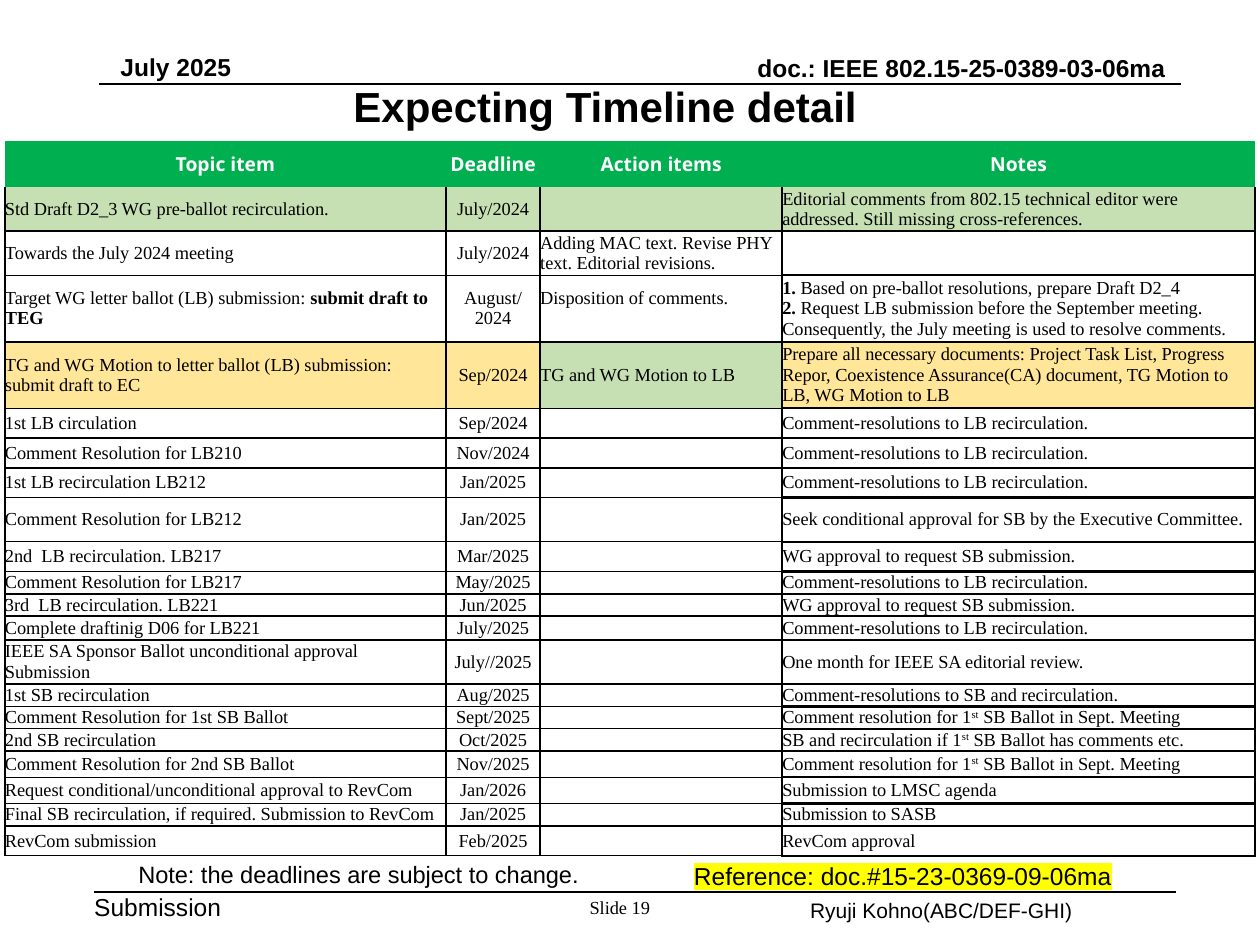
from dataclasses import dataclass

import pptx
import pptx.dml.color
import pptx.enum.shapes
import pptx.enum.text
import pptx.oxml
import pptx.oxml.ns
import pptx.util
from lxml import etree

Cm = pptx.util.Cm
Pt = pptx.util.Pt
Align = pptx.enum.text.PP_ALIGN
Anchor = pptx.enum.text.MSO_ANCHOR
qn = pptx.oxml.ns.qn


@dataclass(frozen=True)
class Theme:
    ink: str = "000000"
    paper: str = "FFFFFF"
    header: str = "00B050"
    done: str = "C6E0B4"
    motion: str = "FFE699"
    marker: str = "FFFF00"
    sans: str = "Arial"
    serif: str = "Times New Roman"
    header_font: str = "Noto Sans"
    title: float = 24
    running: float = 14
    note: float = 13.5
    author: float = 12
    header_size: float = 11
    body: float = 10.5
    thin: float = 1
    thick: float = 1.5


THEME = Theme()


@dataclass(frozen=True)
class Span:
    text: str
    bold: bool = False
    raised: bool = False
    marked: bool = False


@dataclass(frozen=True)
class Style:
    font: str = THEME.sans
    size: float = THEME.running
    bold: bool = False
    color: str = THEME.ink
    align: Align = Align.LEFT


@dataclass(frozen=True)
class Label:
    content: str | tuple[Span, ...]
    at: tuple[float, float, float, float]
    style: Style = Style()
    inset: tuple[float, float] = (0, 0)
    anchor: Anchor = Anchor.TOP
    wrap: bool = True


@dataclass(frozen=True)
class Row:
    height: float
    topic: str | tuple[Span, ...]
    deadline: str
    notes: str | tuple[Span, ...] = ""
    action: str = ""
    fill: str | None = None
    action_fill: str | None = None
    action_bottom: float = 0


PADDED = (0.25, 0.13)
LABELS = (
    Label("doc.: IEEE 802.15-25-0389-03-06ma", (12.5, 1.07, 11, 0.6),
          Style(bold=True, align=Align.RIGHT), anchor=Anchor.BOTTOM),
    Label("Submission", (1.9, 17.98, 2.95, 0.6)),
    Label("Ryuji Kohno(ABC/DEF-GHI)", (16.08, 17.96, 7.09, 0.76),
          Style(size=THEME.author), PADDED),
    Label("July 2025", (2.18, 1.3, 4.45, 0.6), Style(bold=True),
          (0.25, 0.25), Anchor.BOTTOM),
    Label("Note: the deadlines are subject to change.", (2.54, 17.2, 9.53, 0.84),
          Style(size=THEME.note), PADDED, wrap=False),
    Label((Span("Reference: doc.#15-23-0369-09-06ma", marked=True),),
          (13.74, 17.22, 11.43, 0.86), inset=PADDED),
    Label("Slide 19", (11.76, 18.06, 1.47, 0.76),
          Style(THEME.serif, THEME.body, align=Align.CENTER)),
)
TITLE = Label("Expecting Timeline detail", (6.83, 1.5, 10.74, 1.27),
              Style(size=THEME.title, bold=True, align=Align.CENTER), PADDED, wrap=False)

RESOLVE = "Comment-resolutions to LB recirculation."
APPROVAL = "WG approval to request SB submission."
FIRST = Span("st", raised=True)
SEPTEMBER = (Span("Comment resolution for 1"), FIRST, Span(" SB Ballot in Sept. Meeting"))

COLUMNS = {"Topic item": 8.89, "Deadline": 1.9, "Action items": 4.88, "Notes": 9.53}
HEADER_HEIGHT = 0.93
ROWS = (
    Row(0.89, "Std Draft D2_3 WG pre-ballot recirculation.", "July/2024",
        "Editorial comments from 802.15 technical editor were addressed. "
        "Still missing cross-references.", fill=THEME.done, action_fill=THEME.done),
    Row(0.89, "Towards the July 2024 meeting", "July/2024",
        action="Adding MAC text. Revise PHY text. Editorial revisions."),
    Row(1.34, (Span("Target WG letter ballot (LB) submission: "),
               Span("submit draft to TEG", bold=True)), "August/2024",
        (Span("1.", bold=True), Span(" Based on pre-ballot resolutions, prepare Draft D2_4"),
         Span("\n"), Span("2.", bold=True),
         Span(" Request LB submission before the September meeting. "
              "Consequently, the July meeting is used to resolve comments.")),
        "Disposition of comments.", action_bottom=0.42),
    Row(1.34, "TG and WG Motion to letter ballot (LB) submission: submit draft to EC", "Sep/2024",
        "Prepare all necessary documents: Project Task List, Progress Repor, "
        "Coexistence Assurance(CA) document, TG Motion to LB, WG Motion to LB",
        "TG and WG Motion to LB", THEME.motion, THEME.done),
    Row(0.6, "1st LB circulation", "Sep/2024", RESOLVE),
    Row(0.6, "Comment Resolution for LB210", "Nov/2024", RESOLVE),
    Row(0.6, "1st LB recirculation LB212", "Jan/2025", RESOLVE),
    Row(0.89, "Comment Resolution for LB212", "Jan/2025",
        "Seek conditional approval for SB by the Executive Committee."),
    Row(0.6, "2nd  LB recirculation. LB217", "Mar/2025", APPROVAL),
    Row(0.45, "Comment Resolution for LB217", "May/2025", RESOLVE),
    Row(0.45, "3rd  LB recirculation. LB221", "Jun/2025", APPROVAL),
    Row(0.48, "Complete draftinig D06 for LB221", "July/2025", RESOLVE),
    Row(0.89, "IEEE SA Sponsor Ballot unconditional approval Submission", "July//2025",
        "One month for IEEE SA editorial review."),
    Row(0.45, "1st SB recirculation", "Aug/2025", "Comment-resolutions to SB and recirculation."),
    Row(0.45, "Comment Resolution for 1st SB Ballot", "Sept/2025", SEPTEMBER),
    Row(0.45, "2nd SB recirculation", "Oct/2025",
        (Span("SB and recirculation if 1"), FIRST, Span(" SB Ballot has comments etc."))),
    Row(0.53, "Comment Resolution for 2nd SB Ballot", "Nov/2025", SEPTEMBER),
    Row(0.53, "Request conditional/unconditional approval to RevCom", "Jan/2026",
        "Submission to LMSC agenda"),
    Row(0.45, "Final SB recirculation, if required. Submission to RevCom", "Jan/2025",
        "Submission to SASB"),
    Row(0.6, "RevCom submission", "Feb/2025", "RevCom approval"),
)


def rgb(value: str) -> pptx.dml.color.RGBColor:
    return pptx.dml.color.RGBColor.from_string(value)


def add_color(parent: etree._Element, tag: str, value: str) -> None:
    holder = etree.SubElement(parent, qn(tag))
    etree.SubElement(holder, qn("a:srgbClr"), val=value)


def write(frame, content: str | tuple[Span, ...], style: Style) -> None:
    para = frame.paragraphs[0]
    para.alignment = style.align
    para.font.name, para.font.size = style.font, Pt(style.size)
    para.font.bold = style.bold
    para.font.color.rgb = rgb(style.color)
    if not content:
        etree.SubElement(para._p, qn("a:endParaRPr"), sz=str(int(style.size * 100)))
        return
    for span in (Span(content),) if isinstance(content, str) else content:
        if span.text == "\n":
            para.add_line_break()
            continue
        run = para.add_run()
        run.text = span.text
        if span.bold:
            run.font.bold = True
        if span.raised:
            run._r.get_or_add_rPr().set("baseline", "30000")
        if span.marked:
            add_color(run._r.get_or_add_rPr(), "a:highlight", THEME.marker)


def fill_label(box, label: Label) -> None:
    box.left, box.top, box.width, box.height = map(Cm, label.at)
    frame = box.text_frame
    frame.auto_size = pptx.enum.text.MSO_AUTO_SIZE.NONE
    frame.word_wrap = label.wrap
    frame.vertical_anchor = label.anchor
    frame.margin_left = frame.margin_right = Cm(label.inset[0])
    frame.margin_top = frame.margin_bottom = Cm(label.inset[1])
    write(frame, label.content, label.style)


def add_rule(page, left: float, right: float, top: float) -> None:
    rule = page.shapes.add_connector(
        pptx.enum.shapes.MSO_CONNECTOR.STRAIGHT, Cm(left), Cm(top), Cm(right), Cm(top))
    rule.line.color.rgb = rgb(THEME.ink)
    rule.line.width = Pt(THEME.thin)
    etree.SubElement(rule._element.spPr, qn("a:effectLst"))


def fill_cell(cell, content: str | tuple[Span, ...], style: Style, fill: str | None,
              borders: dict[str, float], bottom: float = 0) -> None:
    cell.margin_left = cell.margin_right = cell.margin_top = 0
    cell.margin_bottom = Cm(bottom)
    cell.vertical_anchor = Anchor.MIDDLE
    write(cell.text_frame, content, style)
    properties = cell._tc.get_or_add_tcPr()
    for side, width in borders.items():
        edge = etree.SubElement(properties, qn(f"a:ln{side}"), w=str(Pt(width)))
        add_color(edge, "a:solidFill", THEME.ink)
    if fill:
        cell.fill.solid()
        cell.fill.fore_color.rgb = rgb(fill)
    else:
        cell.fill.background()


def add_timeline(page) -> None:
    heights = (HEADER_HEIGHT, *(row.height for row in ROWS))
    table = page.shapes.add_table(len(heights), len(COLUMNS), Cm(0.1), Cm(2.84),
                                  Cm(sum(COLUMNS.values())), Cm(sum(heights))).table
    table.first_row = table.horz_banding = False
    table._tbl.tblPr.find(qn("a:tableStyleId")).text = "{2D5ABB26-0587-4C30-8999-92F81FD0307C}"
    for line, height in zip(table.rows, heights):
        line.height = Cm(height)
    heading = Style(THEME.header_font, THEME.header_size, True, THEME.paper, Align.CENTER)
    for index, (name, width) in enumerate(COLUMNS.items()):
        table.columns[index].width = Cm(width)
        fill_cell(table.cell(0, index), name, heading, THEME.header, {})
    left = Style(THEME.serif, THEME.body)
    center = Style(THEME.serif, THEME.body, align=Align.CENTER)
    for number, row in enumerate(ROWS, 1):
        for index, content in enumerate((row.topic, row.deadline, row.action, row.notes)):
            level = THEME.thick if index == 3 else THEME.thin
            borders = {"L": THEME.thick, "R": THEME.thick, "T": level, "B": level}
            if number == 1:
                del borders["T"]
            fill_cell(table.cell(number, index), content, center if index == 1 else left,
                      row.action_fill if index == 2 else row.fill, borders,
                      row.action_bottom if index == 2 else 0)


def main() -> None:
    deck = pptx.Presentation()
    deck.slide_width, deck.slide_height = Cm(25.4), Cm(19.05)
    page = deck.slides.add_slide(deck.slide_layouts[5])
    add_rule(page, 1.9, 23.7, 17.98)
    add_rule(page, 2, 23.8, 1.7)
    fill_label(page.shapes.title, TITLE)
    for label in LABELS:
        fill_label(page.shapes.add_textbox(*map(Cm, label.at)), label)
    add_timeline(page)
    deck.save("out.pptx")


if __name__ == "__main__":
    main()
